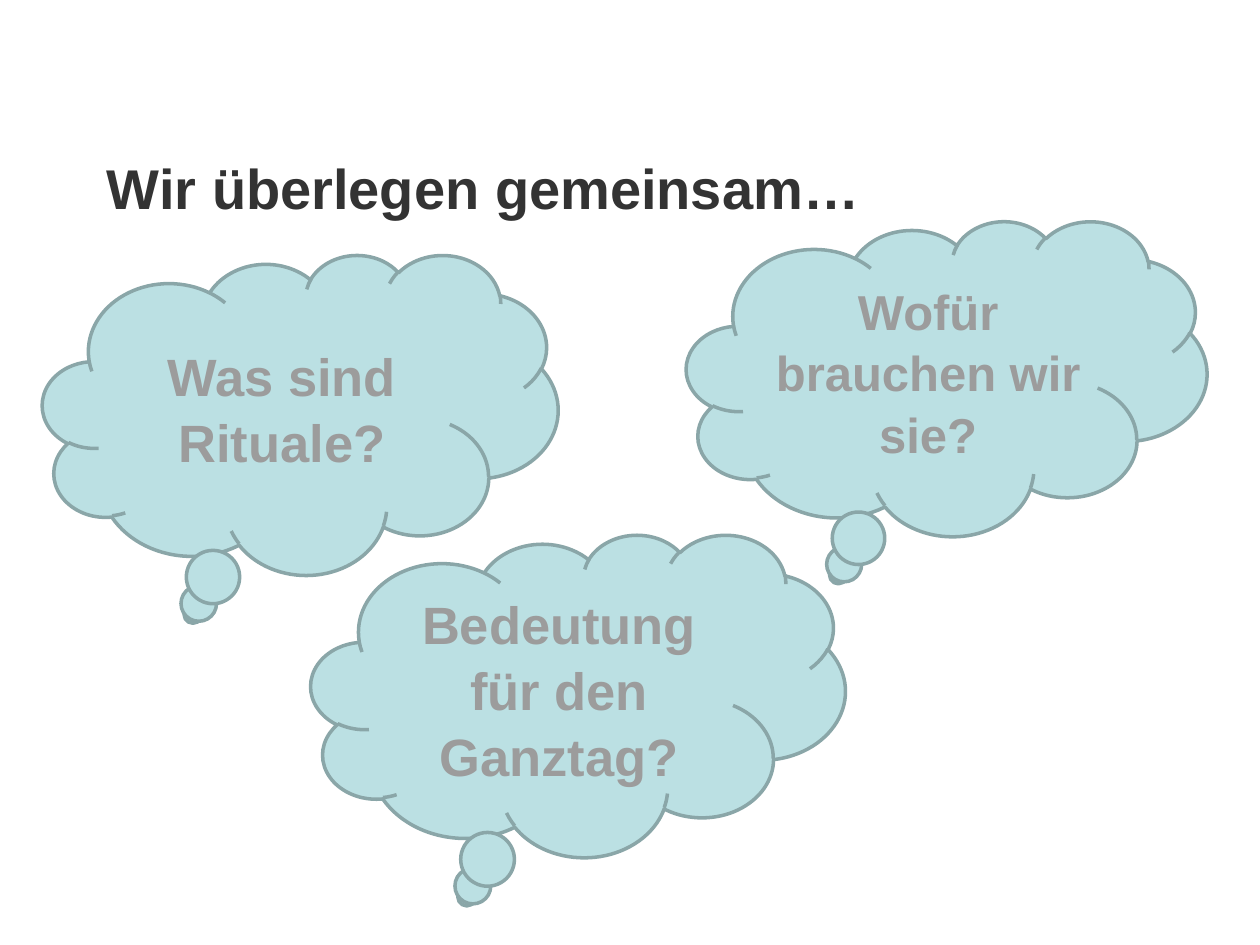
from lxml import etree
from pptx import Presentation
from pptx import util as u
from pptx.dml.color import RGBColor
from pptx.enum import shapes, text
from pptx.oxml import ns

COLORS = {"title": "333333", "question": "9C9C9C", "cloud": "BBE0E3", "outline": "8AA6A8"}


def write(frame, wording, size, color, align, anchor, spacing=1.0):
    frame.word_wrap = True
    frame.auto_size = text.MSO_AUTO_SIZE.NONE
    frame.vertical_anchor = anchor
    paragraph = frame.paragraphs[0]
    properties = paragraph._p.get_or_add_pPr()
    properties.set("marL", "0")
    properties.set("indent", "0")
    etree.SubElement(properties, ns.qn("a:buNone"))
    paragraph.alignment = align
    paragraph.space_before = u.Pt(0)
    paragraph.line_spacing = spacing
    run = paragraph.add_run()
    run.text = wording
    run.font.name = "Arial"
    run.font.size = u.Pt(size)
    run.font.bold = True
    run.font.color.rgb = RGBColor.from_string(COLORS[color])


class Deck:
    def __init__(self):
        self.presentation = Presentation()
        self.presentation.slide_width = u.Cm(25.4)
        self.presentation.slide_height = u.Cm(19.05)
        self.slide = self.presentation.slides.add_slide(self.presentation.slide_layouts[1])

    def place(self, shape, box):
        shape.left, shape.top, shape.width, shape.height = map(u.Cm, box)

    def title(self, wording, box):
        heading = self.slide.shapes.title
        self.place(heading, box)
        write(heading.text_frame, wording, 32, "title",
              text.PP_ALIGN.LEFT, text.MSO_ANCHOR.TOP)

    def style_cloud(self, cloud, wording, size):
        cloud.fill.solid()
        cloud.fill.fore_color.rgb = RGBColor.from_string(COLORS["cloud"])
        cloud.line.color.rgb = RGBColor.from_string(COLORS["outline"])
        cloud.line.width = u.Pt(2)
        cloud.shadow.inherit = False
        write(cloud.text_frame, wording, size, "question",
              text.PP_ALIGN.CENTER, text.MSO_ANCHOR.MIDDLE, 1.05)

    def cloud(self, wording, box, size=30):
        cloud = self.slide.shapes.add_shape(
            shapes.MSO_SHAPE.CLOUD_CALLOUT, *map(u.Cm, box))
        self.style_cloud(cloud, wording, size)

    def body_cloud(self, wording, box, size=28):
        body = self.slide.placeholders[1]
        self.place(body, box)
        geometry = etree.SubElement(body._element.spPr, ns.qn("a:prstGeom"), prst="cloudCallout")
        etree.SubElement(geometry, ns.qn("a:avLst"))
        self.style_cloud(body, wording, size)

    def save(self):
        self.presentation.save("out.pptx")


def main():
    deck = Deck()
    deck.title("Wir überlegen gemeinsam…", (1.9, 2.97, 22.23, 3.18))
    deck.cloud("Was sind Rituale?", (0.86, 5.13, 10.39, 6.45))
    deck.body_cloud("Wofür brauchen wir sie?", (13.84, 4.45, 10.49, 6.35))
    deck.cloud("Bedeutung für den Ganztag?", (6.27, 10.77, 10.77, 6.5))
    deck.save()


if __name__ == "__main__":
    main()
